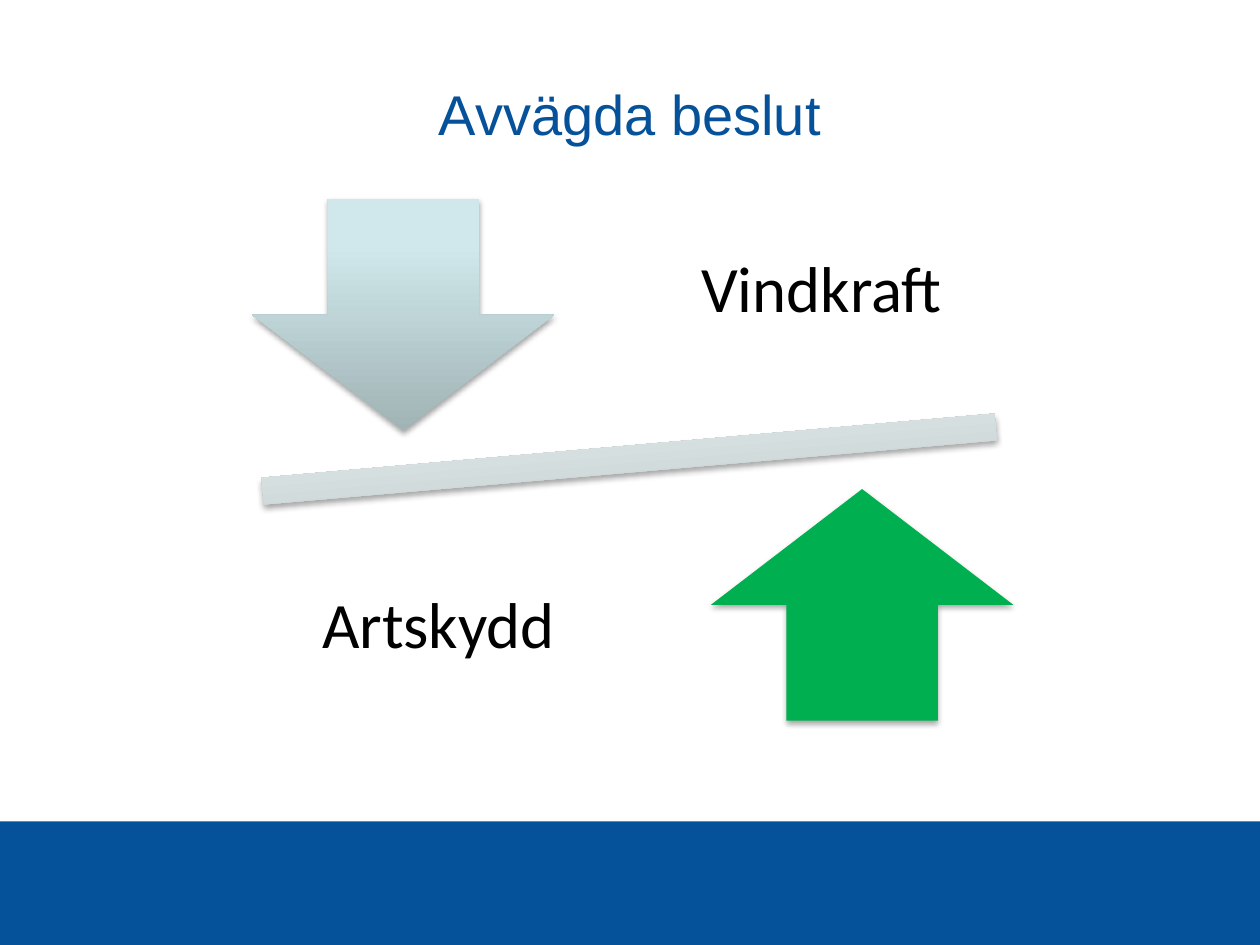
"""Build a slide showing a seesaw that weighs wind power against species protection."""
from dataclasses import dataclass, field

from pptx import Presentation
from pptx.dml.color import RGBColor
from pptx.enum.shapes import MSO_SHAPE as Preset
from pptx.enum.text import MSO_ANCHOR as Anchor, PP_ALIGN as Align
from pptx.oxml import parse_xml
from pptx.oxml.ns import nsdecls
from pptx.util import Cm, Pt

BLUE, GREEN, BLACK = "06529A", "00B050", "000000"
ARROW_SIZE = (6.1, 4.67)
LABEL_SIZE = (6.5, 4.9)
SHADOW = (
    f'<a:outerShdw {nsdecls("a")} blurRad="40000" dist="23000" dir="5400000" rotWithShape="0">'
    '<a:srgbClr val="000000"><a:alpha val="35000"/></a:srgbClr></a:outerShdw>'
)
LABEL_FONT = {"name": "Calibri", "size": Pt(37)}
LABEL_FRAME = {f"margin_{side}": Cm(0.74) for side in ("left", "right", "top", "bottom")}


@dataclass
class Figure:
    preset: Preset
    position: tuple[float, float]
    size: tuple[float, float]
    colours: tuple[str, ...]
    rotation: float = 0
    shadow: bool = True


@dataclass
class Caption:
    words: str
    position: tuple[float, float]
    size: tuple[float, float] = LABEL_SIZE
    colour: str = BLACK
    font: dict = field(default_factory=lambda: LABEL_FONT)
    frame: dict = field(default_factory=lambda: LABEL_FRAME)
    spacing: float = 0.9


FIGURES = [
    Figure(Preset.RECTANGLE, (0, 16.56), (25.4, 2.49), (BLUE,), shadow=False),
    Figure(Preset.MATH_MINUS, (2.59, 8.1), (20.19, 2.31), ("B3BABA", "E8F1F2"), rotation=355),
    Figure(Preset.DOWN_ARROW, (5.08, 4.01), ARROW_SIZE, ("A0B3B5", "D0E8EB")),
    Figure(Preset.UP_ARROW, (14.33, 9.86), ARROW_SIZE, (GREEN,)),
]
CAPTIONS = [
    Caption("Avvägda beslut", (2.54, 1.4), (20.32, 2.03), BLUE,
            {"name": "Arial", "size": Pt(32)},
            {"margin_top": Cm(0), "margin_bottom": Cm(0.25)}, 1.0),
    Caption("Vindkraft", (13.31, 3.43)),
    Caption("Artskydd", (5.59, 10.21)),
]


def paint(colour_format, colour: str) -> None:
    colour_format.rgb = RGBColor.from_string(colour)


def apply(target, values: dict) -> None:
    for name, value in values.items():
        setattr(target, name, value)


def draw_figure(slide, figure: Figure) -> None:
    shape = slide.shapes.add_shape(
        figure.preset, *map(Cm, figure.position), *map(Cm, figure.size))
    shape.rotation = figure.rotation
    shape.line.fill.background()
    if len(figure.colours) == 1:
        shape.fill.solid()
        paint(shape.fill.fore_color, figure.colours[0])
    else:
        shape.fill.gradient()
        shape.fill.gradient_angle = 90
        for stop, colour, position in zip(shape.fill.gradient_stops, figure.colours, (0, 0.8)):
            paint(stop.color, colour)
            stop.position = position
    shape.shadow.inherit = False
    if figure.shadow:
        shape._element.spPr.effectLst.append(parse_xml(SHADOW))


def draw_caption(slide, caption: Caption) -> None:
    box = slide.shapes.add_textbox(*map(Cm, caption.position), *map(Cm, caption.size))
    frame = box.text_frame
    apply(frame, {"word_wrap": True, "vertical_anchor": Anchor.MIDDLE, **caption.frame})
    paragraph = frame.paragraphs[0]
    apply(paragraph, {"alignment": Align.CENTER, "line_spacing": caption.spacing})
    run = paragraph.add_run()
    run.text = caption.words
    apply(run.font, caption.font)
    paint(run.font.color, caption.colour)


def main() -> None:
    deck = Presentation()
    apply(deck, {"slide_width": Cm(25.4), "slide_height": Cm(19.05)})
    slide = deck.slides.add_slide(deck.slide_layouts[6])
    for figure in FIGURES:
        draw_figure(slide, figure)
    for caption in CAPTIONS:
        draw_caption(slide, caption)
    deck.save("out.pptx")


if __name__ == "__main__":
    main()
